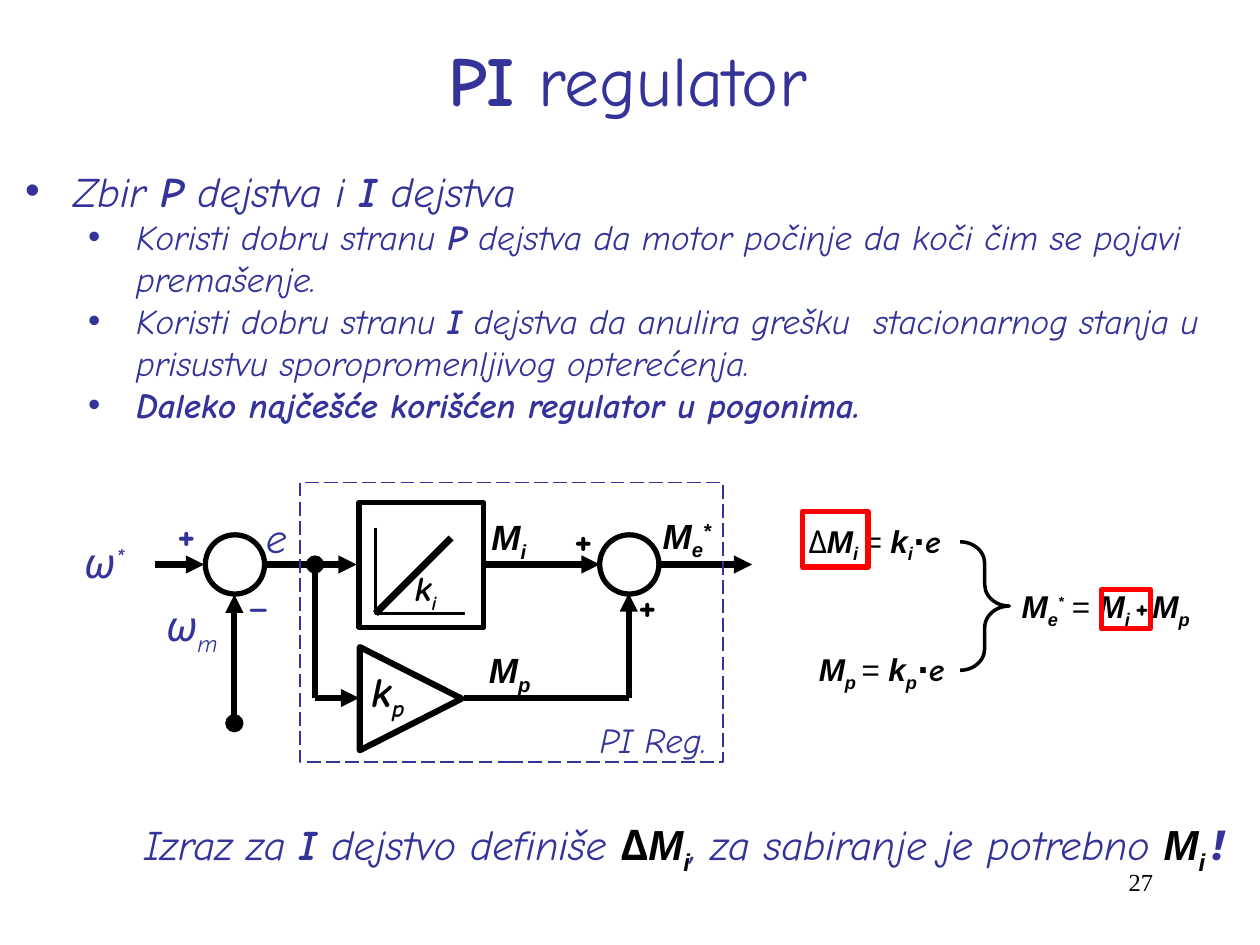
from functools import partial

from lxml import etree
from pptx import Presentation
from pptx.dml.color import RGBColor
from pptx.enum.dml import MSO_LINE
from pptx.enum.shapes import MSO_CONNECTOR, MSO_SHAPE
from pptx.enum.text import MSO_ANCHOR, PP_ALIGN
from pptx.oxml.ns import qn
from pptx.util import Inches, Pt

BLUE = RGBColor(0x33, 0x33, 0x99)
BLACK = RGBColor(0x00, 0x00, 0x00)
WHITE = RGBColor(0xFF, 0xFF, 0xFF)
RED = RGBColor(0xFF, 0x00, 0x00)
COMIC, ARIAL, TIMES, DISPLAY = "Comic Neue", "Arial", "Times New Roman", "Montserrat"
LEFT, CENTER, RIGHT = PP_ALIGN.LEFT, PP_ALIGN.CENTER, PP_ALIGN.RIGHT
TOP, MIDDLE = MSO_ANCHOR.TOP, MSO_ANCHOR.MIDDLE
RECT, OVAL, TRIANGLE = MSO_SHAPE.RECTANGLE, MSO_SHAPE.OVAL, MSO_SHAPE.ISOSCELES_TRIANGLE
BRACE, STRAIGHT, DASH = MSO_SHAPE.RIGHT_BRACE, MSO_CONNECTOR.STRAIGHT, MSO_LINE.LONG_DASH
COLS, ROWS = 100, 75
SUB, SUP = -25, 30


def styled(text, font=COMIC, color=BLUE, b=False, i=False, base=0, size=None):
    """One run of text with its format."""
    return text, font, color, b, i, base, size


plain = partial(styled, i=True)
strong = partial(styled, b=True, i=True)
math = partial(styled, font=ARIAL, color=BLACK, b=True, i=True)
comic_math = partial(math, font=COMIC)
equals = math("= ", b=False)


def var(symbol, index, style=math):
    return [style(symbol), style(index, base=SUB)]


class Deck:
    """Holds the grid, the line style and the current slide."""

    def __init__(self, width=10, height=7.5):
        self.prs = Presentation()
        self.prs.slide_width, self.prs.slide_height = Inches(width), Inches(height)
        self.col = self.prs.slide_width / COLS
        self.row = self.prs.slide_height / ROWS
        self.s = self.prs.slides.add_slide(self.prs.slide_layouts[6])

    def place(self, x, y, *size):
        factors = (self.col, self.row, self.col, self.row)
        return [round(v * f) for v, f in zip((x, y, *size), factors)]

    def text(self, x, y, w, h, *paras, size=20, align=LEFT, anchor=TOP,
             inset=False, wrap=True, bullets=False):
        tf = self.s.shapes.add_textbox(*self.place(x, y, w, h)).text_frame
        tf.word_wrap, tf.vertical_anchor = wrap, anchor
        if not inset:
            tf.margin_left = tf.margin_right = tf.margin_top = tf.margin_bottom = 0
        for n, runs in enumerate(paras):
            p = tf.paragraphs[0] if n == 0 else tf.add_paragraph()
            p.alignment = align
            if bullets:
                self.bullet(p, level=min(n, 1))
            for text, font, color, b, i, base, own_size in runs:
                r = p.add_run()
                r.text = text
                f = r.font
                f.name, f.bold, f.italic = font, b, i
                f.size = Pt(own_size or (size - 4 if bullets and n else size))
                f.color.rgb = color
                if base:
                    r._r.get_or_add_rPr().set("baseline", str(base * 1000))

    def bullet(self, p, level):
        p.level = level
        pPr = p._p.get_or_add_pPr()
        pPr.set("marL", str(Inches(0.38 + 0.5 * level)))
        pPr.set("indent", str(Inches(-0.38)))
        etree.SubElement(pPr, qn("a:buFont"), typeface=ARIAL)
        etree.SubElement(pPr, qn("a:buChar"), char="•")

    def shape(self, kind, x, y, w, h, width=3, color=BLACK, fill=None, dash=None, rotation=0):
        sp = self.s.shapes.add_shape(kind, *self.place(x, y, w, h))
        sp.shadow.inherit = False
        sp.rotation = rotation
        if fill is None:
            sp.fill.background()
        else:
            sp.fill.solid()
            sp.fill.fore_color.rgb = fill
        sp.line.color.rgb, sp.line.width = color, Pt(width)
        if dash:
            sp.line.dash_style = dash
        return sp

    def line(self, x1, y1, x2, y2, width=3.5, head=None, tail=None):
        ends = self.place(x1, y1) + self.place(x2, y2)
        c = self.s.shapes.add_connector(STRAIGHT, *ends)
        c.line.color.rgb, c.line.width = BLACK, Pt(width)
        for tag, kind in (("a:headEnd", head), ("a:tailEnd", tail)):
            if kind:
                etree.SubElement(c.line._get_or_add_ln(), qn(tag), type=kind)
        etree.SubElement(c._element.spPr, qn("a:effectLst"))

    def arrow(self, *ends, head=None):
        self.line(*ends, head=head, tail="triangle")


def header_and_bullets(d):
    d.text(7.3, 0, 85, 12.5, [styled("PI", b=True), styled(" regulator")],
           size=40, align=CENTER, anchor=MIDDLE, inset=True)
    d.text(71.7, 68.3, 20.8, 5, [styled("27", font=TIMES, color=BLACK)],
           size=14, align=RIGHT, inset=True)
    d.text(2, 13.1, 96.1, 20.9,
           [plain("Zbir "), strong("P"), plain(" dejstva i "), strong("I "), plain("dejstva")],
           [plain("Koristi dobru stranu "), strong("P"),
            plain(" dejstva da motor počinje da koči čim se pojavi premašenje.")],
           [plain("Koristi dobru stranu "), strong("I "),
            plain("dejstva da anulira grešku  stacionarnog stanja u prisustvu "
                  "sporopromenljivog opterećenja.")],
           [strong("Daleko najčešće korišćen regulator u pogonima.")],
           size=24, bullets=True)


def block_diagram(d):
    main, lower, branch, sum_x = 44.8, 55.4, 25, 49.9  # signal rows and columns

    # Proportional block and its output
    d.line(36.8, lower, sum_x, lower)
    d.shape(TRIANGLE, 28.5, 51.4, 8.2, 8.1, width=3.5, fill=WHITE, rotation=90)
    d.text(28.5, 52.3, 5, 5, var("k", "p", comic_math), size=24, inset=True, wrap=False)

    # Integral block with its ramp
    d.text(32.9, 45, 4.1, 3.4, var("k", "i", comic_math))
    d.shape(RECT, 28.5, 39.9, 9.9, 9.9)
    d.line(29.8, 41.9, 29.8, 48.7, width=2)
    d.line(29.8, 48.7, 36.9, 48.7, width=2)
    d.line(29.8, 48.7, 35.8, 42.7, width=4)

    # Summing points
    for x in (16.3, 47.6):
        d.shape(OVAL, x, 42.45, 4.7, 4.7)

    # Signal paths
    d.arrow(18.6, 57.4, 18.6, 47.2, head="oval")
    for x1, x2 in ((12.3, 16.2), (21, 28.3), (38.4, 47.6), (52.3, 59.7)):
        d.arrow(x1, main, x2, main)
    d.arrow(branch, lower, 28.5, lower)
    d.line(branch, lower, branch, main, tail="oval")
    d.arrow(sum_x, lower, sum_x, 47.1)

    # Signs at the summing points
    for x, y, color in ((13.1, 39.8, BLUE), (44.6, 40.2, BLACK), (49.7, 45.4, BLACK)):
        d.text(x, y, 3.1, 5.1, [styled("+", color=color, b=True)], size=24, inset=True)
    d.text(18.9, 45.5, 3.1, 4, [styled("_", b=True)], size=18, inset=True)

    # Signal names
    d.text(13.2, 47.6, 4.7, 4, var("ω", "m", plain), size=24)
    d.text(6.7, 42.6, 4.7, 4, [plain("ω"), plain("*", base=SUP)], size=24)
    d.text(21.1, 40.6, 2.5, 4, [plain("e")], size=24)
    d.text(52.6, 40.8, 4.7, 3.4, var("M", "e") + [math("*", base=SUP)])
    d.text(39, 40.9, 4.7, 3.4, var("M", "i"))
    d.text(38.8, 51.5, 4.7, 3.4, var("M", "p"))

    # Regulator frame
    d.shape(RECT, 23.8, 38.3, 33.6, 22.2, width=1, color=BLUE, dash=DASH)
    d.text(47.6, 57, 9.7, 3.4, [plain("PI Reg.")])


def equations(d):
    formula = partial(d.text, size=18, inset=True)
    error = [math("⋅"), comic_math("e")]
    formula(63.2, 40.9, 13, 4,
            [styled("Δ", color=BLACK), *var("M", "i "), equals, *var("k", "i"), *error],
            wrap=False)
    formula(80.1, 46.1, 19.9, 4,
            [*var("M", "e"), comic_math("* ", i=False, base=SUP), equals, *var("M", "i "),
             comic_math("+", i=False), comic_math(" ", size=10, base=SUP), *var("M", "p")])
    formula(64, 51.1, 13, 4,
            [*var("M", "p "), equals, *var("k", "p"), *error], wrap=False)
    brace = d.shape(BRACE, 76.2, 43, 3.9, 10.2, width=2)
    brace.adjustments[0], brace.adjustments[1] = 0.44, 0.5

    # Conclusion
    d.text(2, 65, 96.1, 4,
           [plain("Izraz za "), strong("I "), plain("dejstvo definiše "),
            styled("Δ", color=BLACK, b=True), *var("M", "i"),
            plain(", za sabiranje je potrebno "), *var("M", "i "),
            strong("! ", font=DISPLAY)],
           size=24, align=RIGHT)

    # Highlighted terms
    d.shape(RECT, 63.7, 40.6, 5.2, 4.4, color=RED)
    d.shape(RECT, 87.4, 46.8, 3.9, 3.1, color=RED)


def main():
    d = Deck()
    header_and_bullets(d)
    block_diagram(d)
    equations(d)
    d.prs.save("out.pptx")


if __name__ == "__main__":
    main()
